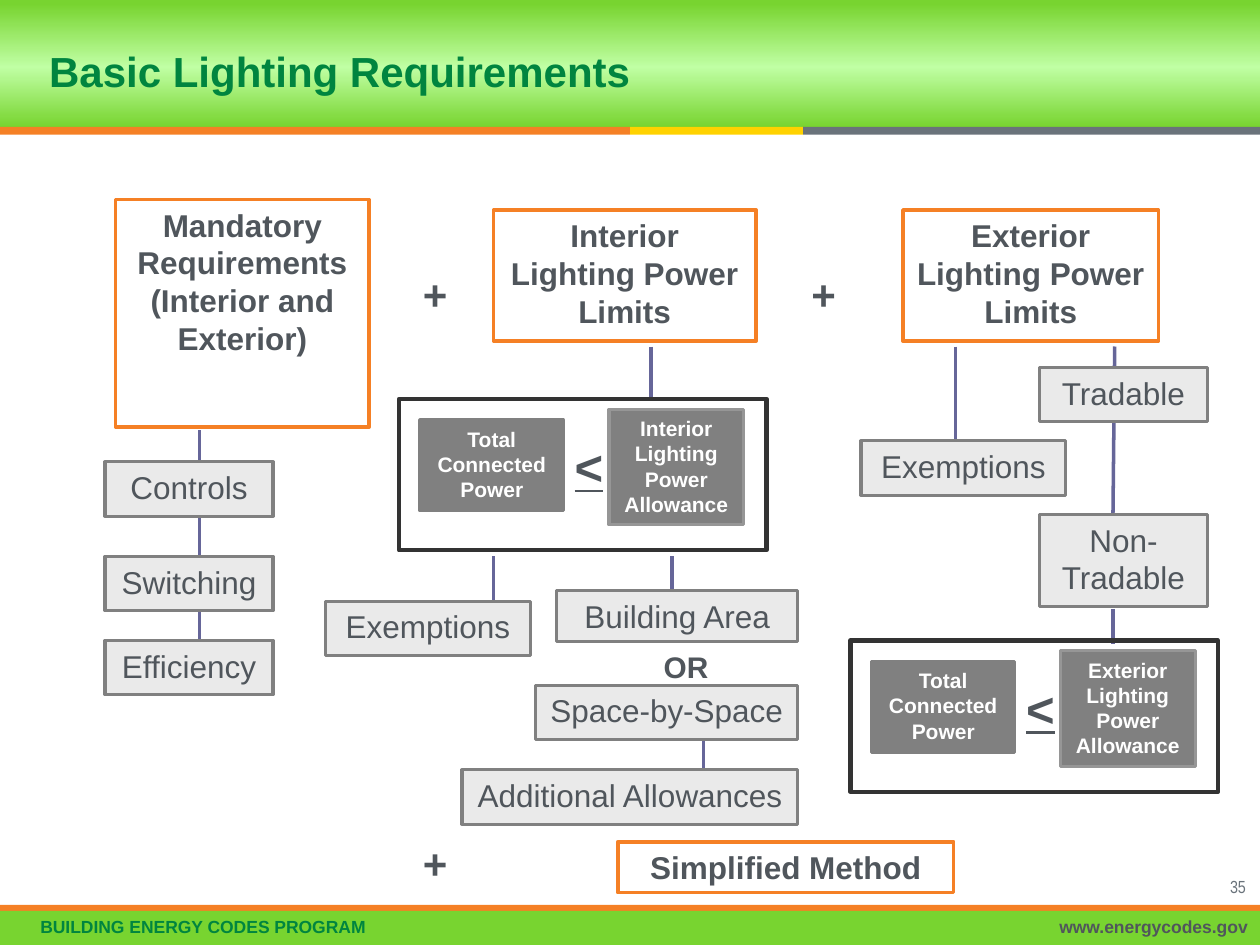
import pptx
import pptx.util
import pptx.dml.color
import pptx.enum.shapes
import pptx.enum.text
import pptx.oxml.ns
import pptx.oxml.xmlchemy
import copy

Pt = pptx.util.Pt
ALIGN = pptx.enum.text.PP_ALIGN
ANCHOR = pptx.enum.text.MSO_ANCHOR

COLORS = {
    "green": "78D430", "pale": "C0FFA4", "title": "00853F", "orange": "F58025",
    "yellow": "FFD200", "slate": "6A737B", "text": "50565C", "white": "FFFFFF",
    "light": "EAEAEA", "gray": "808080", "mid": "969696", "frame": "333333",
    "link": "666699",
}

# Content: text, (left, top, width, height) in points
HEADINGS = [
    ("Mandatory Requirements (Interior and Exterior)", (66, 114, 145, 130)),
    ("Interior Lighting Power Limits", (282, 120, 150, 75)),
    ("Exterior Lighting Power Limits", (516, 120, 146, 75)),
    ("Simplified Method", (353, 481, 192, 29)),
]
TOPICS = [
    ("Controls", (60, 264, 96, 31)),
    ("Switching", (60, 318, 96, 31)),
    ("Efficiency", (60, 366, 96, 31)),
    ("Exemptions", (186, 343.5, 117, 31)),
    ("Building Area", (318, 337.5, 138, 29)),
    ("Space-by-Space", (306, 391.5, 150, 31)),
    ("Additional Allowances", (264, 440, 192, 31)),
    ("Exemptions", (492, 252, 117, 31)),
    ("Tradable", (594, 210, 96, 31)),
    ("Non-Tradable", (594, 294, 96, 52.5)),
]
# Comparison panels: allowance name, left, top
PANELS = [("Interior", 228, 228), ("Exterior", 486, 366)]
PLUS_AT = [(228, 150), (450, 150), (228, 475)]
# Links: x1, y1, x2, y2
LINKS = [
    (114, 246, 114, 386), (282, 318, 282, 360), (384, 318, 384, 356),
    (402, 421, 402, 451), (372, 198, 372, 228), (546, 198, 546, 252),
    (637, 198, 636, 294), (636, 348, 636, 368),
]
# Strips: colour, box
STRIPS = [
    ("orange", (0, 72.5, 360, 4.5)), ("yellow", (360, 72.5, 99, 4.5)),
    ("slate", (459, 72.5, 261, 4.5)), ("orange", (0, 517, 720, 3.5)),
    ("green", (0, 520.5, 720, 19.5)),
]

prs = pptx.Presentation()
prs.slide_width, prs.slide_height = Pt(720), Pt(540)
s = prs.slides.add_slide(prs.slide_layouts[6])


def rgb(name):
    return pptx.dml.color.RGBColor.from_string(COLORS[name])


def add_rect(box, fill=None, line=None, weight=1.75):
    sp = s.shapes.add_shape(pptx.enum.shapes.MSO_SHAPE.RECTANGLE, *map(Pt, box))
    sp.shadow.inherit = False
    if fill:
        sp.fill.solid()
        sp.fill.fore_color.rgb = rgb(fill)
    else:
        sp.fill.background()
    if line:
        sp.line.color.rgb = rgb(line)
        sp.line.width = Pt(weight)
    else:
        sp.line.fill.background()
    return sp


def add_text(text, box=None, sp=None, size=18, color="text", bold=False,
             underline=None, font="Arial", align=ALIGN.CENTER,
             anchor=ANCHOR.TOP, spacing=None):
    """Write text into sp, or into a new text box at box."""
    if sp is None:
        sp = s.shapes.add_textbox(*map(Pt, box))
    tf = sp.text_frame
    tf.word_wrap = True
    tf.vertical_anchor = anchor
    p = tf.paragraphs[0]
    p.alignment = align
    if spacing:
        p.line_spacing = spacing
    r = p.add_run()
    r.text = text
    r.font.name, r.font.size = font, Pt(size)
    r.font.bold, r.font.underline = bold, underline
    r.font.color.rgb = rgb(color)


def add_link(x1, y1, x2, y2):
    c = s.shapes.add_connector(pptx.enum.shapes.MSO_CONNECTOR.STRAIGHT,
                               Pt(x1), Pt(y1), Pt(x2), Pt(y2))
    c.line.color.rgb = rgb("link")
    c.line.width = Pt(2)
    c._element.spPr.append(pptx.oxml.xmlchemy.OxmlElement("a:effectLst"))


# Header band with a three-stop vertical gradient
band = add_rect((0, 0, 720, 72.5), "green")
band.fill.gradient()
band.fill.gradient_angle = 90
stops = band._element.spPr.find(".//" + pptx.oxml.ns.qn("a:gsLst"))
stops.insert(1, copy.deepcopy(stops[0]))
for stop, (pos, color) in zip(band.fill.gradient_stops,
                              [(0, "green"), (0.47, "pale"), (0.97, "green")]):
    stop.position = pos
    stop.color.rgb = rgb(color)

for color, box in STRIPS:
    add_rect(box, color)

# Title and footer
add_text("Basic Lighting Requirements", (21, 5, 672, 72), size=24, bold=True,
         color="title", align=ALIGN.LEFT, anchor=ANCHOR.MIDDLE, spacing=Pt(28))
add_text("BUILDING ENERGY CODES PROGRAM", (16, 521, 560, 19), size=10, bold=True,
         color="title", align=ALIGN.LEFT, spacing=0.9)
add_text("www.energycodes.gov", (431, 521, 289, 19), size=10, bold=True,
         align=ALIGN.RIGHT, spacing=0.9)
add_text("35", (668, 497, 51, 13), size=10, color="slate", font="Arial Narrow",
         align=ALIGN.RIGHT)

# Links lie behind the boxes
for link in LINKS:
    add_link(*link)

# Heading and topic boxes
for text, box in HEADINGS:
    add_text(text, sp=add_rect(box, "white", "orange", 2), bold=True)
for text, box in TOPICS:
    add_text(text, sp=add_rect(box, "light", "gray"))

# Comparison panels
for name, x, y in PANELS:
    add_rect((x, y, 210, 86.5), line="frame", weight=2.5)
    for text, box, line in [
        ("Total Connected Power", (x + 12, y + 12, 82, 52), "gray"),
        (f"{name} Lighting Power Allowance", (x + 120, y + 6, 77, 66), "mid"),
    ]:
        add_text(text, sp=add_rect(box, "gray", line), size=12, color="white", bold=True)
    add_text("<", (x + 84, y + 18, 49, 41), size=28, bold=True, underline=True)

# Operators
for x, y in PLUS_AT:
    add_text("+ ", (x, y, 48, 36), size=24, bold=True)
add_text("OR", (354, 367, 76, 27), size=17, bold=True)

prs.save("out.pptx")
